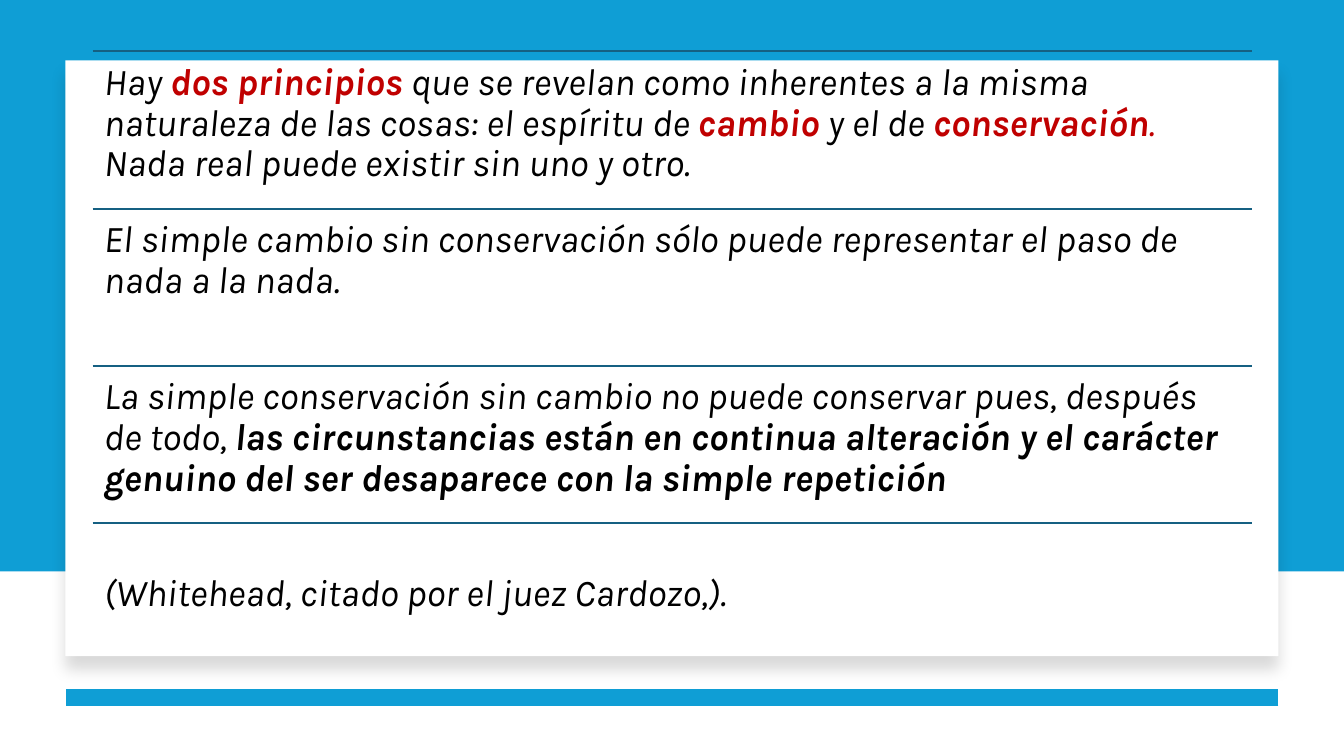
"""Builds a quotation slide about change and conservation."""
from dataclasses import dataclass

from lxml.etree import SubElement
from pptx import Presentation
from pptx.dml.color import RGBColor
from pptx.enum.shapes import MSO_CONNECTOR as Connector, MSO_SHAPE as Shape
from pptx.enum.text import MSO_ANCHOR as Anchor
from pptx.oxml.ns import qn
from pptx.util import Inches, Pt


@dataclass(frozen=True)
class Theme:
    """Colours, font and sizes of the slide."""
    sky: RGBColor = RGBColor(0x0F, 0x9E, 0xD5)
    rule: RGBColor = RGBColor(0x15, 0x60, 0x82)
    white: RGBColor = RGBColor(0xFF, 0xFF, 0xFF)
    black: RGBColor = RGBColor(0x00, 0x00, 0x00)
    red: RGBColor = RGBColor(0xC0, 0x00, 0x00)
    font: str = "Karla"
    text_size: int = 27
    rule_width: float = 1.5
    bar_width: int = 12


THEME = Theme()
LEFT, TOP, WIDTH, ROW_HEIGHT = 0.92, 0.51, 11.5, 1.56
INSET = 0.11
CITATION_DROP = 0.6

PASSAGES = [
    [("Hay ", THEME.black, False),
     ("dos principios ", THEME.red, True),
     ("que se revelan como inherentes a la misma naturaleza de las cosas: "
      "el espíritu de ", THEME.black, False),
     ("cambio", THEME.red, True),
     (" y el de ", THEME.black, False),
     ("conservación", THEME.red, True),
     (".", THEME.red, False),
     (" Nada real puede existir sin uno y otro.", THEME.black, False)],
    [("El simple cambio sin conservación sólo puede representar el paso de "
      "nada a la nada.", THEME.black, False)],
    [("La simple conservación sin cambio no puede conservar pues, después "
      "de todo, ", THEME.black, False),
     ("las circunstancias están en continua alteración y el carácter "
      "genuino del ser desaparece con la simple repetición", THEME.black, True)],
    [("(Whitehead, citado por el juez Cardozo,).", THEME.black, False)],
]


def add_panel(slide, left, top, width, height, color):
    """Add a plain filled rectangle."""
    shape = slide.shapes.add_shape(Shape.RECTANGLE, Inches(left), Inches(top),
                                   Inches(width), Inches(height))
    shape.fill.solid()
    shape.fill.fore_color.rgb = color
    shape.line.fill.background()
    shape.shadow.inherit = False
    return shape


def add_soft_shadow(shape):
    """Give a shape a faint shadow that falls straight down."""
    effects = shape._element.spPr.find(qn("a:effectLst"))
    shadow = SubElement(effects, qn("a:outerShdw"), blurRad=str(Pt(11)),
                        dist=str(Pt(10)), dir="5400000", algn="t", rotWithShape="0")
    color = SubElement(shadow, qn("a:srgbClr"), val=str(THEME.black))
    SubElement(color, qn("a:alpha"), val="15000")


def add_rule(slide, start, end, top, color, width):
    """Add a horizontal line without a shadow."""
    line = slide.shapes.add_connector(Connector.STRAIGHT, Inches(start), Inches(top),
                                      Inches(end), Inches(top))
    line.line.color.rgb = color
    line.line.width = Pt(width)
    SubElement(line._element.spPr, qn("a:effectLst"))


def add_passage(slide, top, runs, drop):
    """Add one italic passage, lowered by drop inches within its row."""
    box = slide.shapes.add_textbox(Inches(LEFT), Inches(top),
                                   Inches(WIDTH), Inches(ROW_HEIGHT))
    frame = box.text_frame
    frame.word_wrap = True
    frame.vertical_anchor = Anchor.TOP
    frame.margin_left = frame.margin_right = frame.margin_bottom = Inches(INSET)
    frame.margin_top = Inches(INSET + drop)
    paragraph = frame.paragraphs[0]
    paragraph.line_spacing = 0.9
    for text, color, bold in runs:
        run = paragraph.add_run()
        run.text = text
        font = run.font
        font.name = THEME.font
        font.size = Pt(THEME.text_size)
        font.italic = True
        font.bold = bold
        font.color.rgb = color


def main():
    """Build and save the slide."""
    presentation = Presentation()
    presentation.slide_width = Inches(13.33)
    presentation.slide_height = Inches(7.5)
    slide = presentation.slides.add_slide(presentation.slide_layouts[6])

    add_panel(slide, 0, 0, 13.33, 5.67, THEME.sky)
    card = add_panel(slide, 0.65, 0.6, 12.03, 5.91, THEME.white)
    add_soft_shadow(card)
    add_rule(slide, 12.68, 0.65, 6.92, THEME.sky, THEME.bar_width)

    for index, runs in enumerate(PASSAGES):
        top = TOP + index * ROW_HEIGHT
        drop = CITATION_DROP if runs is PASSAGES[-1] else 0
        add_rule(slide, LEFT, LEFT + WIDTH, top, THEME.rule, THEME.rule_width)
        add_passage(slide, top, runs, drop)

    presentation.save("out.pptx")


if __name__ == "__main__":
    main()
